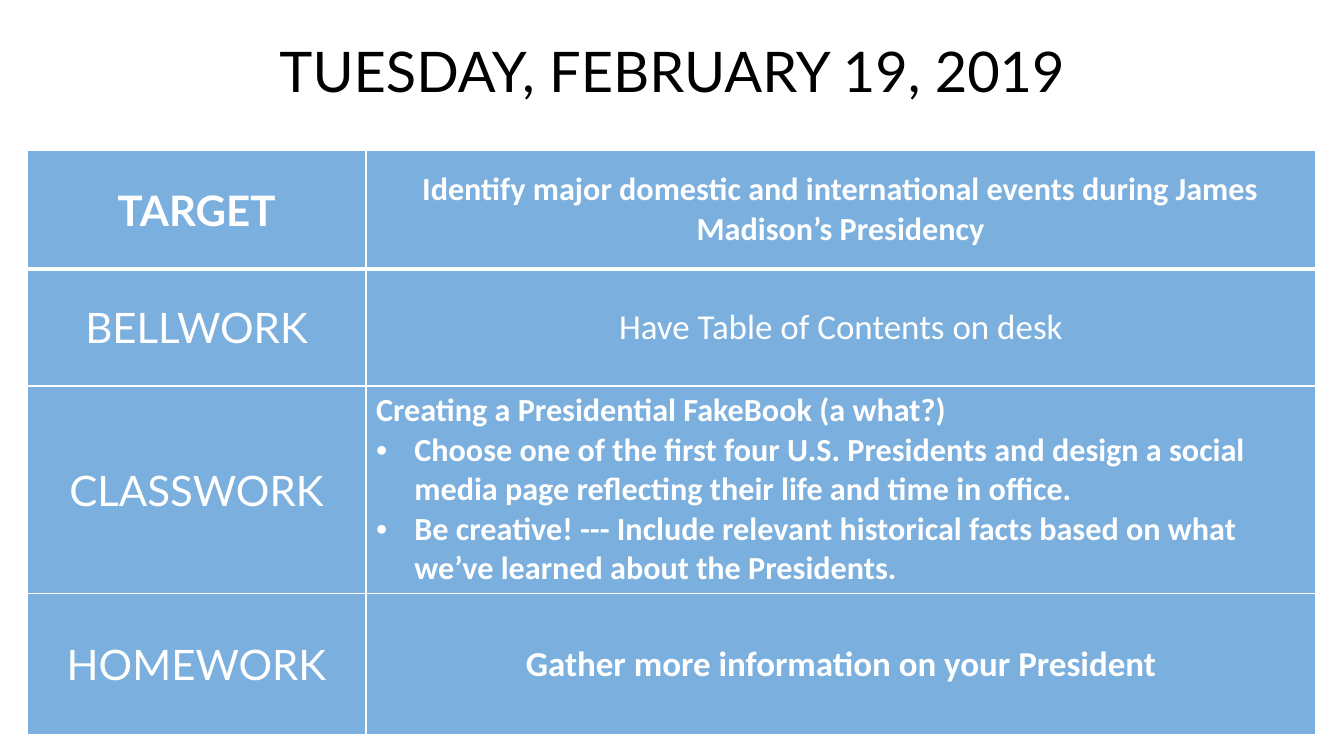
from dataclasses import dataclass

from pptx import Presentation
from pptx.dml.color import RGBColor
from pptx.dml.fill import FillFormat
from pptx.enum.text import MSO_ANCHOR as Anchor, MSO_AUTO_SIZE as AutoSize, PP_ALIGN as Align
from pptx.oxml.ns import qn
from pptx.oxml.xmlchemy import BaseOxmlElement as Element
from pptx.slide import Slide
from pptx.table import _Cell as Cell
from pptx.text.text import _Paragraph as Paragraph
from pptx.util import Emu, Pt
from lxml.etree import SubElement

PX = 9144
WHITE, BLACK, BLUE = "FFFFFF", "000000", "5B9BD5"
LABEL_FONT, BODY_FONT = "Lato", "Calibri"
LEFT, WIDTH = 27, 1279
TITLE_TOP, TITLE_HEIGHT, TABLE_TOP = 20, 100, 149
COLUMNS = (336, 942)
INDENT = 38


@dataclass(frozen=True)
class AgendaRow:
    """One labelled line of the day's agenda."""
    label: str
    text: str
    height: int
    size: int
    bold: bool = True
    label_bold: bool = False
    bullets: tuple[str, ...] = ()


AGENDA = (
    AgendaRow("TARGET", "Identify major domestic and international events during "
              "James Madison’s Presidency", 118, 23, label_bold=True),
    AgendaRow("BELLWORK", "Have Table of Contents on desk", 116, 25, bold=False),
    AgendaRow("CLASSWORK", "Creating a Presidential FakeBook (a what?)", 206, 23, bullets=(
        "Choose one of the first four U.S. Presidents and design a social media page "
        "reflecting their life and time in office.",
        "Be creative! --- Include relevant historical facts based on what we’ve learned "
        "about the Presidents.")),
    AgendaRow("HOMEWORK", "Gather more information on your President", 140, 25),
)


def px(n: int) -> Emu:
    """Turn px into EMU."""
    return Emu(n * PX)


def rgb(value: str) -> RGBColor:
    """Turn a hex string into a colour."""
    return RGBColor.from_string(value)


def paint(fill: FillFormat, props: Element, color: str, opacity: int) -> None:
    """Fill with a partly transparent colour."""
    fill.solid()
    fill.fore_color.rgb = rgb(color)
    SubElement(props.find(qn("a:solidFill"))[0], qn("a:alpha"), val=str(opacity * 1000))


def style(p: Paragraph, font: str, size: int, color: str, bold: bool, align: Align) -> None:
    """Align a paragraph and format its runs."""
    p.alignment = align
    for r in p.runs:
        r.font.name, r.font.size, r.font.bold = font, Pt(size), bold
        r.font.color.rgb = rgb(color)


def add_bullet(p: Paragraph) -> None:
    """Give a paragraph a hanging bullet."""
    pPr = p._p.get_or_add_pPr()
    pPr.set("marL", str(px(INDENT)))
    pPr.set("indent", str(px(-INDENT)))
    SubElement(pPr, qn("a:buFont"), typeface="Arial")
    SubElement(pPr, qn("a:buChar"), char="•")


def format_cell(cell: Cell, row: int) -> None:
    """Set a cell's borders, fill and anchor."""
    tcPr = cell._tc.get_or_add_tcPr()
    widths = {"L": 1, "R": 1, "T": 3 if row == 1 else 1, "B": 3 if row == 0 else 1}
    for side, width in widths.items():
        ln = SubElement(tcPr, qn(f"a:ln{side}"), w=str(Pt(width)))
        SubElement(SubElement(ln, qn("a:solidFill")), qn("a:srgbClr"), val=WHITE)
    paint(cell.fill, tcPr, BLUE, 80)
    cell.vertical_anchor = Anchor.MIDDLE


def add_title(s: Slide, text: str) -> None:
    """Place and format the title."""
    sp = s.shapes.title
    sp.left, sp.top, sp.width, sp.height = map(px, (LEFT, TITLE_TOP, WIDTH, TITLE_HEIGHT))
    paint(sp.fill, sp._element.spPr, WHITE, 65)
    tf = sp.text_frame
    tf.text = text
    tf.word_wrap, tf.auto_size, tf.vertical_anchor = True, AutoSize.NONE, Anchor.MIDDLE
    style(tf.paragraphs[0], LABEL_FONT, 40, BLACK, False, Align.CENTER)


def add_agenda(s: Slide, agenda: tuple[AgendaRow, ...]) -> None:
    """Add the agenda table."""
    height = sum(item.height for item in agenda)
    table = s.shapes.add_table(len(agenda), len(COLUMNS), px(LEFT), px(TABLE_TOP),
                               px(WIDTH), px(height)).table
    for column, width in zip(table.columns, COLUMNS):
        column.width = px(width)
    for i, item in enumerate(agenda):
        table.rows[i].height = px(item.height)
        label, body = table.cell(i, 0), table.cell(i, 1)
        for cell in (label, body):
            format_cell(cell, i)
        label.text_frame.text = item.label
        style(label.text_frame.paragraphs[0], LABEL_FONT, 30, WHITE, item.label_bold,
              Align.CENTER)
        tf = body.text_frame
        tf.text = item.text
        for bullet in item.bullets:
            p = tf.add_paragraph()
            p.text = bullet
            add_bullet(p)
        if item.bullets:
            body.vertical_anchor = Anchor.TOP
        for p in tf.paragraphs:
            style(p, BODY_FONT, item.size, WHITE, item.bold,
                  Align.LEFT if item.bullets else Align.CENTER)


def main() -> None:
    """Build and save the slide."""
    prs = Presentation()
    prs.slide_width, prs.slide_height = px(1333), px(750)
    s = prs.slides.add_slide(prs.slide_layouts[5])
    add_title(s, "TUESDAY, FEBRUARY 19, 2019")
    add_agenda(s, AGENDA)
    prs.save("out.pptx")


if __name__ == "__main__":
    main()
